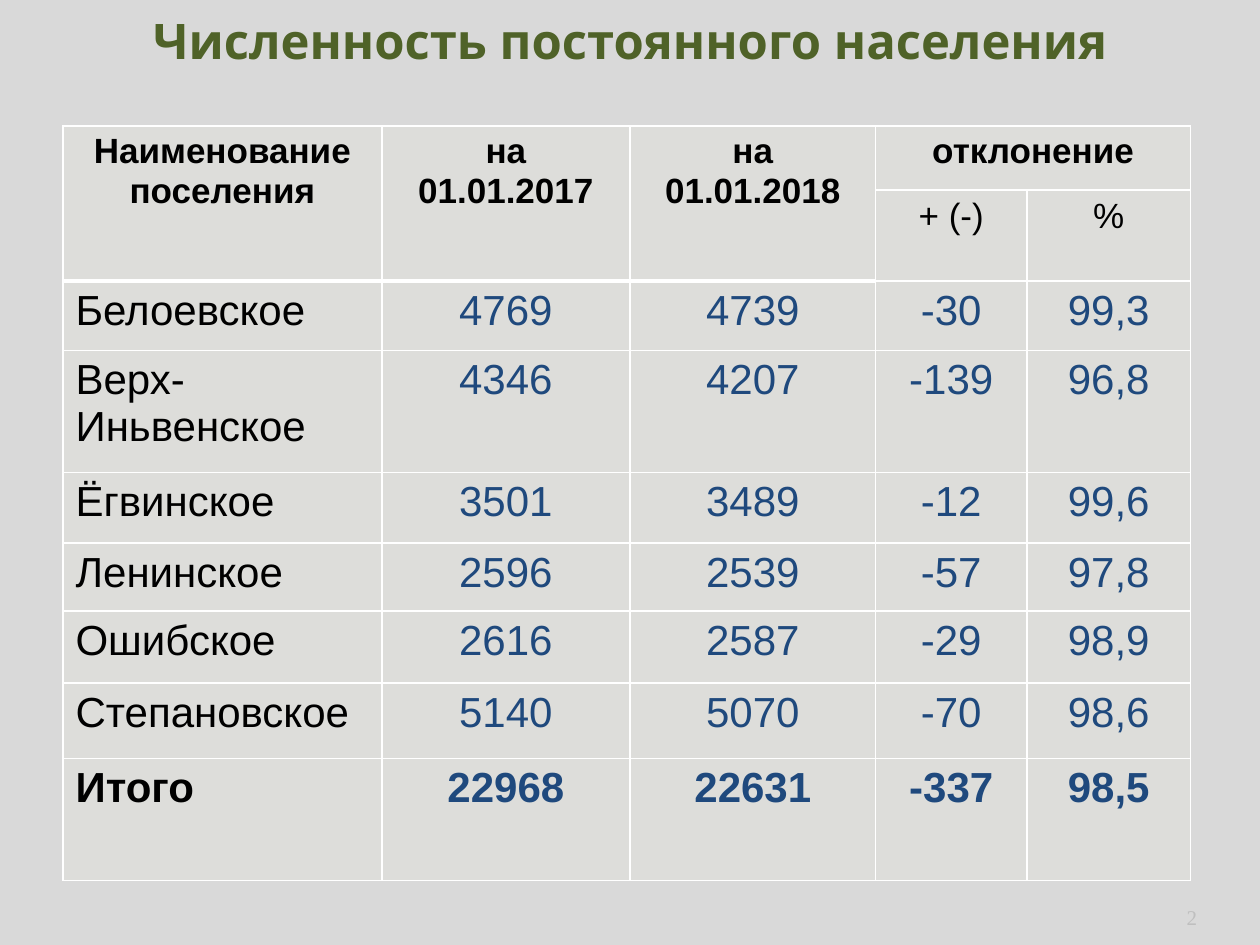
from lxml.etree import SubElement
from pptx import Presentation
from pptx.dml.color import RGBColor
from pptx.enum.text import MSO_ANCHOR, PP_ALIGN
from pptx.oxml import parse_xml
from pptx.oxml.ns import nsdecls, qn
from pptx.util import Inches, Pt

BACKGROUND = RGBColor(0xD9, 0xD9, 0xD9)
CELL_FILL = RGBColor(0xEE, 0xEC, 0xE1)
BORDER = RGBColor(0xFF, 0xFF, 0xFF)
GREEN = RGBColor(0x4F, 0x62, 0x28)
BLUE = RGBColor(0x1F, 0x49, 0x7D)
BLACK = RGBColor(0, 0, 0)
PALE = RGBColor(0xBF, 0xBF, 0xBF)

CELL_OPACITY = 23
COL_WIDTHS = [2.53, 1.97, 1.95, 1.2, 1.3]
ROW_HEIGHTS = [0.51, 0.47, 0.55, 0.97, 0.56, 0.54, 0.57, 0.6, 0.97]
HEADER_ROWS = 2
HEADER = [
    ["Наименование поселения", "на 01.01.2017", "на 01.01.2018", "отклонение", ""],
    ["", "", "", "+ (-)", "%"],
]
POPULATION = [
    ["Белоевское", "4769", "4739", "-30", "99,3"],
    ["Верх-Иньвенское", "4346", "4207", "-139", "96,8"],
    ["Ёгвинское", "3501", "3489", "-12", "99,6"],
    ["Ленинское", "2596", "2539", "-57", "97,8"],
    ["Ошибское", "2616", "2587", "-29", "98,9"],
    ["Степановское", "5140", "5070", "-70", "98,6"],
    ["Итого", "22968", "22631", "-337", "98,5"],
]


def write(tf, text, size, color, font="Arial", bold=False, align=PP_ALIGN.CENTER):
    p = tf.paragraphs[0]
    p.alignment = align
    r = p.add_run()
    r.text = text
    r.font.name = font
    r.font.size = Pt(size)
    r.font.bold = bold
    r.font.color.rgb = color


def place(sp, box):
    sp.left, sp.top, sp.width, sp.height = map(Inches, box)


def style_cell(cell, top=1, bottom=1):
    """Give the cell a translucent fill and white borders, widths in points."""
    cell.fill.solid()
    cell.fill.fore_color.rgb = CELL_FILL
    tc_pr = cell._tc.get_or_add_tcPr()
    color = tc_pr.find(qn("a:solidFill")).find(qn("a:srgbClr"))
    SubElement(color, qn("a:alpha"), val=str(CELL_OPACITY * 1000))
    sides = {"lnL": 1, "lnR": 1, "lnT": top, "lnB": bottom}
    for i, (side, width) in enumerate(sides.items()):
        tc_pr.insert(i, parse_xml(
            f'<a:{side} {nsdecls("a")} w="{Pt(width)}"><a:solidFill>'
            f'<a:srgbClr val="{BORDER}"/></a:solidFill></a:{side}>'))


def add_title(s, box):
    title = s.shapes.title
    place(title, box)
    tf = title.text_frame
    tf.word_wrap = True
    tf.vertical_anchor = MSO_ANCHOR.TOP
    tf.margin_top = Inches(0.08)
    write(tf, "Численность постоянного населения", 28, GREEN, "Noto Sans", True)


def add_population_table(s, box):
    rows = HEADER + POPULATION
    frame = s.shapes.add_table(len(rows), len(COL_WIDTHS), *map(Inches, box))
    table = frame.table
    table.first_row = table.horz_banding = False
    for column, width in zip(table.columns, COL_WIDTHS):
        column.width = Inches(width)
    for row, height in zip(table.rows, ROW_HEIGHTS):
        row.height = Inches(height)

    for c in range(3):
        table.cell(0, c).merge(table.cell(1, c))
    table.cell(0, 3).merge(table.cell(0, 4))

    for r, values in enumerate(rows):
        is_header = r < HEADER_ROWS
        for c, text in enumerate(values):
            cell = table.cell(r, c)
            thick = c < 3
            style_cell(cell,
                       top=3 if thick and r == HEADER_ROWS else 1,
                       bottom=3 if thick and is_header else 1)
            if not text:
                continue
            is_name = c == 0 and not is_header
            write(cell.text_frame, text,
                  size=20 if is_header else 24,
                  color=BLACK if is_header or is_name else BLUE,
                  bold=r in (0, len(rows) - 1),
                  align=PP_ALIGN.LEFT if is_name else PP_ALIGN.CENTER)


def add_page_number(s, box):
    tf = s.shapes.add_textbox(*map(Inches, box)).text_frame
    tf.word_wrap = True
    tf.vertical_anchor = MSO_ANCHOR.MIDDLE
    write(tf, "2", 12, PALE, "Times New Roman", align=PP_ALIGN.RIGHT)


def main():
    prs = Presentation()
    prs.slide_width, prs.slide_height = Inches(10), Inches(7.5)
    s = prs.slides.add_slide(prs.slide_layouts[5])
    s.background.fill.solid()
    s.background.fill.fore_color.rgb = BACKGROUND
    add_title(s, (0.5, 0, 9, 1.15))
    add_population_table(s, (0.5, 1, sum(COL_WIDTHS), sum(ROW_HEIGHTS)))
    add_page_number(s, (8.6, 7.08, 1, 0.4))
    prs.save("out.pptx")


if __name__ == "__main__":
    main()
